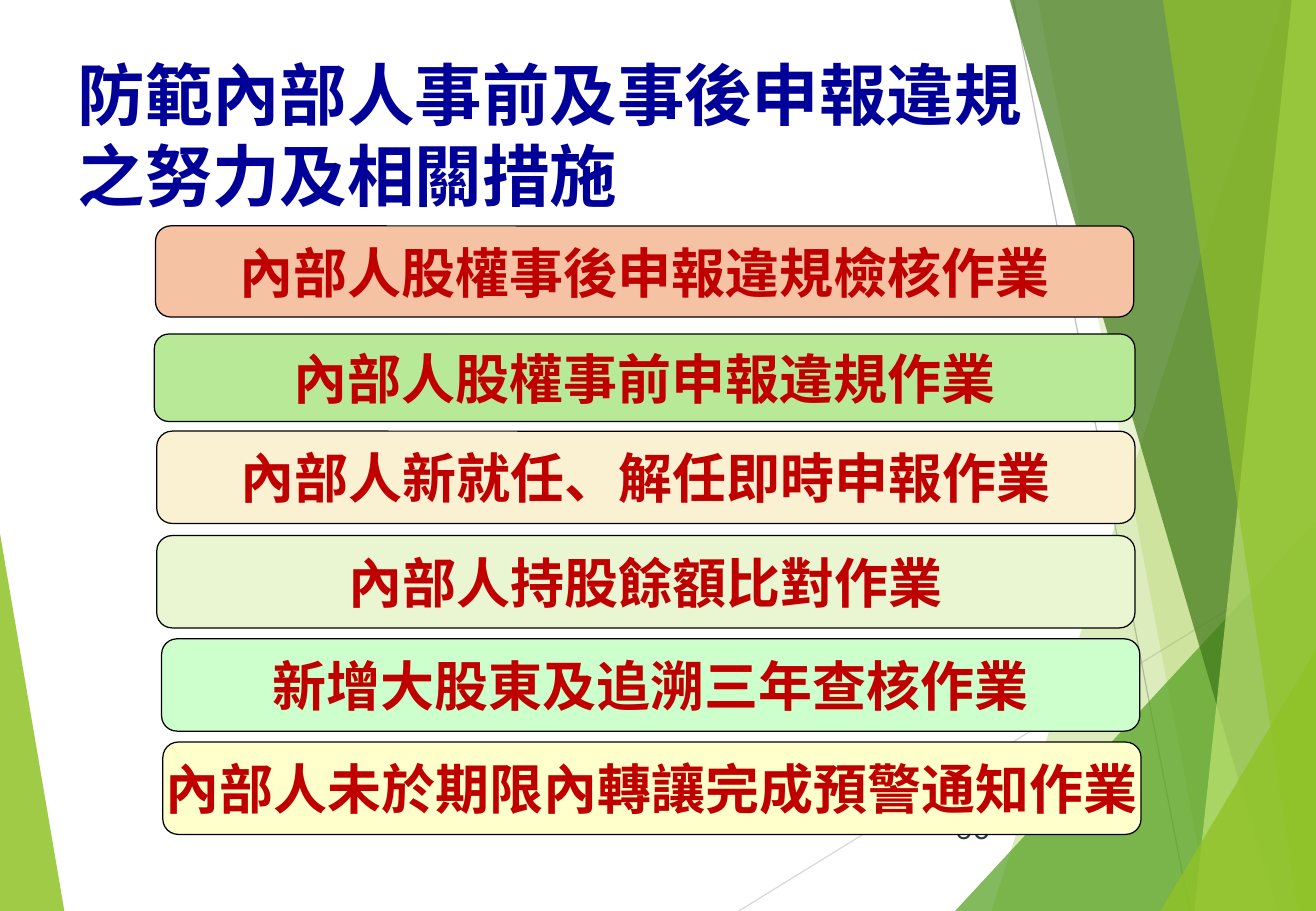
import pptx
import pptx.util
import pptx.dml.color
import pptx.enum.shapes
import pptx.enum.text
import pptx.oxml.ns
from lxml import etree

Inches, Pt = pptx.util.Inches, pptx.util.Pt
Align, Anchor = pptx.enum.text.PP_ALIGN, pptx.enum.text.MSO_ANCHOR
qn = pptx.oxml.ns.qn

WIDE, HIGH = 10.83, 7.5
CJK = "Noto Sans CJK SC"
COLORS = {
    "lime": "90C226", "green": "54A021", "forest": "3F7819", "pale": "C0E474",
    "grey": "BFBFBF", "mist": "D9D9D9", "navy": "000099", "red": "C00000",
    "slate": "2C3C43", "black": "000000", "peach": "F5C2A3", "leaf": "B7E996",
    "sand": "FAF1D2", "tea": "EAF6D1", "mint": "CCFFCC", "cream": "FFFFCC",
}

# Colour, opacity in percent, corner points within the slide
FACETS = [
    ("lime", 30, [(10.56, 0), (8.16, HIGH), (WIDE, HIGH), (WIDE, 0)]),
    ("lime", 20, [(8.54, 0), (9.96, HIGH), (WIDE, HIGH), (WIDE, 0)]),
    ("green", 72, [(7.86, HIGH), (WIDE, 4.29), (WIDE, HIGH)]),
    ("forest", 70, [(8.31, 0), (10.51, HIGH), (WIDE, HIGH), (WIDE, 0)]),
    ("pale", 70, [(10.63, 0), (9.83, HIGH), (WIDE, HIGH), (WIDE, 0)]),
    ("lime", 65, [(9.57, 0), (10.68, HIGH), (WIDE, HIGH), (WIDE, 0)]),
    ("lime", 80, [(9.55, HIGH), (WIDE, 5.35), (WIDE, HIGH)]),
]
WEDGE = ("lime", 85, [(0, 4.39), (0.53, HIGH), (0, HIGH)])
RAYS = [("mist", (6.08, HIGH), (WIDE, 4.57)), ("grey", (8.34, 0), (9.79, HIGH))]

# Text, fill, offset from the list's corner, size
TASKS = [
    ("內部人股權事後申報違規檢核作業", "peach", (0.01, 0), (8.05, 0.75)),
    ("內部人股權事前申報違規作業", "leaf", (0, 0.89), (8.07, 0.72)),
    ("內部人新就任、解任即時申報作業", "sand", (0.02, 1.69), (8.05, 0.76)),
    ("內部人持股餘額比對作業", "tea", (0.02, 2.55), (8.05, 0.76)),
    ("新增大股東及追溯三年查核作業", "mint", (0.06, 3.4), (8.05, 0.76)),
    ("內部人未於期限內轉讓完成預警通知作業", "cream", (0.07, 4.25), (8.05, 0.76)),
]


def color(name):
    return pptx.dml.color.RGBColor.from_string(COLORS[name])


def write(shape, text, size, ink, font=CJK, bold=True, align=Align.LEFT,
          anchor=Anchor.MIDDLE, wrap=True, pitch=None):
    frame = shape.text_frame
    frame.text = text
    frame.word_wrap = wrap
    frame.vertical_anchor = anchor
    para = frame.paragraphs[0]
    para.alignment = align
    if pitch:
        para.line_spacing = Pt(pitch)
    for run in para.runs:
        run.font.size, run.font.bold, run.font.name = Pt(size), bold, font
        run.font.color.rgb = color(ink)
        east = etree.SubElement(run.font._element, qn("a:ea"))
        east.set("typeface", font)


def label(slide, box, text, **style):
    write(slide.shapes.add_textbox(*map(Inches, box)), text, **style)


def facet(slide, box, fill, alpha, points):
    spots = [(Inches(box[0] + x), Inches(box[1] + y)) for x, y in points]
    path = slide.shapes.build_freeform(*spots[0], scale=1.0)
    path.add_line_segments(spots[1:], close=True)
    shape = path.convert_to_shape()
    shape.shadow.inherit = False
    shape.fill.solid()
    shape.fill.fore_color.rgb = color(fill)
    shape.line.fill.background()
    tint = shape._element.spPr.find(qn("a:solidFill"))[0]
    etree.SubElement(tint, qn("a:alpha")).set("val", str(alpha * 1000))


def ray(slide, box, ink, start, end):
    ends = [Inches(box[i] + spot[i]) for spot in (start, end) for i in (0, 1)]
    line = slide.shapes.add_connector(
        pptx.enum.shapes.MSO_CONNECTOR.STRAIGHT, *ends)
    line.line.color.rgb = color(ink)
    line.line.width = Pt(0.75)
    etree.SubElement(line._element.spPr, qn("a:effectLst"))


def backdrop(slide, box):
    facet(slide, box, *WEDGE)
    for item in RAYS:
        ray(slide, box, *item)
    for item in FACETS:
        facet(slide, box, *item)


def tasks(slide, box):
    for text, fill, (dx, dy), size in TASKS:
        bar = slide.shapes.add_shape(
            pptx.enum.shapes.MSO_SHAPE.ROUNDED_RECTANGLE,
            *map(Inches, (box[0] + dx, box[1] + dy, *size)))
        bar.shadow.inherit = False
        bar.fill.solid()
        bar.fill.fore_color.rgb = color(fill)
        bar.line.color.rgb = color("black")
        bar.line.width = Pt(0.75)
        write(bar, text, size=32, ink="red", align=Align.CENTER, wrap=False)


def main():
    deck = pptx.Presentation()
    deck.slide_width, deck.slide_height = Inches(WIDE), Inches(HIGH)
    slide = deck.slides.add_slide(deck.slide_layouts[6])
    backdrop(slide, (0, 0))
    label(slide, (7.64, 6.61, 0.61, 0.4), "50", size=18, ink="slate",
          font="Karla", bold=False, align=Align.RIGHT)
    label(slide, (0.54, 0.39, 10.29, 0.84), "防範內部人事前及事後申報違規\v之努力及相關措施",
          size=40, ink="navy", anchor=Anchor.TOP, pitch=48)
    tasks(slide, (1.27, 1.86))
    deck.save("out.pptx")


if __name__ == "__main__":
    main()
